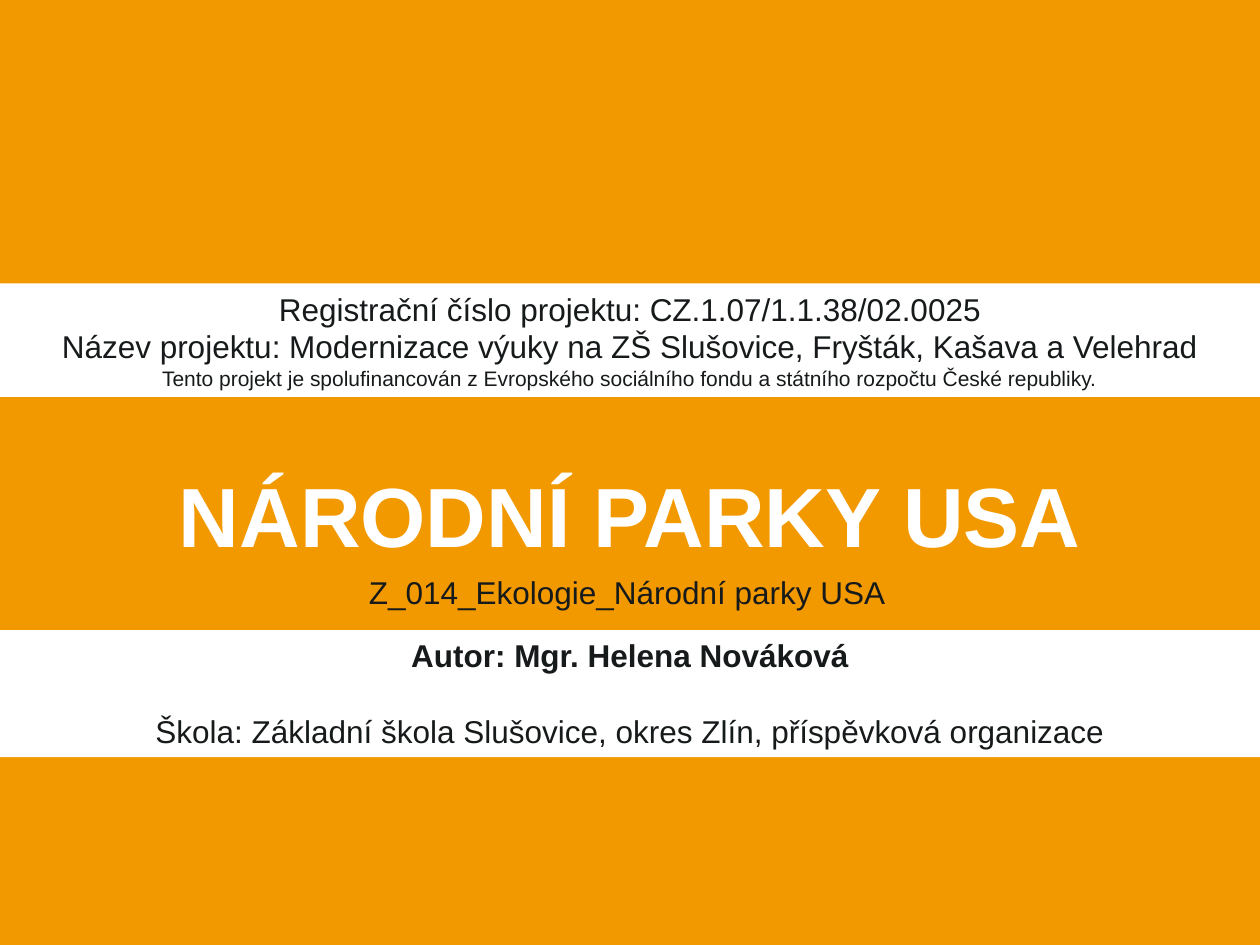
from dataclasses import dataclass

from pptx import Presentation
from pptx.dml.color import RGBColor
from pptx.enum.shapes import MSO_SHAPE
from pptx.enum.text import MSO_ANCHOR, MSO_AUTO_SIZE, PP_ALIGN
from pptx.util import Inches, Pt


@dataclass(frozen=True)
class Theme:
    orange: RGBColor = RGBColor(0xF3, 0x99, 0x00)
    white: RGBColor = RGBColor(0xFF, 0xFF, 0xFF)
    ink: RGBColor = RGBColor(0x17, 0x1A, 0x1B)
    font: str = "Arial"
    title: int = 48
    body: int = 18
    note: int = 12
    gap: float = 21.6


THEME = Theme()
WIDTH, HEIGHT = 10, 7.5
COLUMN, ROW = Inches(WIDTH / 40), Inches(HEIGHT / 30)


def grid_box(column, row, columns, rows):
    return {
        "left": round(column * COLUMN),
        "top": round(row * ROW),
        "width": round(columns * COLUMN),
        "height": round(rows * ROW),
    }


def place(shape, box):
    for name, value in box.items():
        setattr(shape, name, value)


def write_lines(frame, lines, align=PP_ALIGN.CENTER):
    for index, (text, size, color, bold, gap) in enumerate(lines):
        para = frame.paragraphs[0] if index == 0 else frame.add_paragraph()
        para.alignment = align
        para.space_before = Pt(gap)
        span = para.add_run()
        span.text = text
        span.font.color.rgb = color
        style = {"name": THEME.font, "size": Pt(size), "bold": bold}
        for name, value in style.items():
            setattr(span.font, name, value)


def add_title(page, box, text):
    title = page.shapes.title
    place(title, box)
    frame = title.text_frame
    frame.vertical_anchor = MSO_ANCHOR.MIDDLE
    frame.auto_size = MSO_AUTO_SIZE.NONE
    write_lines(frame, [(text, THEME.title, THEME.white, True, 0)])


def add_band(page, box, lines):
    band = page.shapes.add_shape(MSO_SHAPE.RECTANGLE, *box.values())
    band.shadow.inherit = False
    band.fill.solid()
    band.fill.fore_color.rgb = THEME.white
    band.line.fill.background()
    frame = band.text_frame
    frame.word_wrap = True
    frame.vertical_anchor = MSO_ANCHOR.TOP
    write_lines(frame, lines)


def add_code(page, box, text):
    label = page.shapes.add_textbox(*box.values())
    frame = label.text_frame
    frame.word_wrap = False
    write_lines(frame, [(text, THEME.body, THEME.ink, False, 0)], PP_ALIGN.LEFT)


def build_cover(page):
    page.background.fill.solid()
    page.background.fill.fore_color.rgb = THEME.orange
    add_title(page, grid_box(3, 14.32, 34, 4), "NÁRODNÍ PARKY USA")
    add_band(page, grid_box(0, 20, 40, 4.04), [
        ("Autor: Mgr. Helena Nováková", THEME.body, THEME.ink, True, 0),
        ("Škola: Základní škola Slušovice, okres Zlín, příspěvková organizace",
         THEME.body, THEME.ink, False, THEME.gap),
    ])
    add_band(page, grid_box(0, 9, 40, 3.6), [
        ("Registrační číslo projektu: CZ.1.07/1.1.38/02.0025",
         THEME.body, THEME.ink, False, 0),
        ("Název projektu: Modernizace výuky na ZŠ Slušovice, Fryšták, Kašava a Velehrad",
         THEME.body, THEME.ink, False, 0),
        ("Tento projekt je spolufinancován z Evropského sociálního fondu "
         "a státního rozpočtu České republiky.",
         THEME.note, THEME.ink, False, 0),
    ])
    add_code(page, grid_box(11.32, 18, 17.36, 1.6), "Z_014_Ekologie_Národní parky USA")


def main():
    deck = Presentation()
    deck.slide_width, deck.slide_height = Inches(WIDTH), Inches(HEIGHT)
    build_cover(deck.slides.add_slide(deck.slide_layouts[5]))
    deck.save("out.pptx")


if __name__ == "__main__":
    main()
